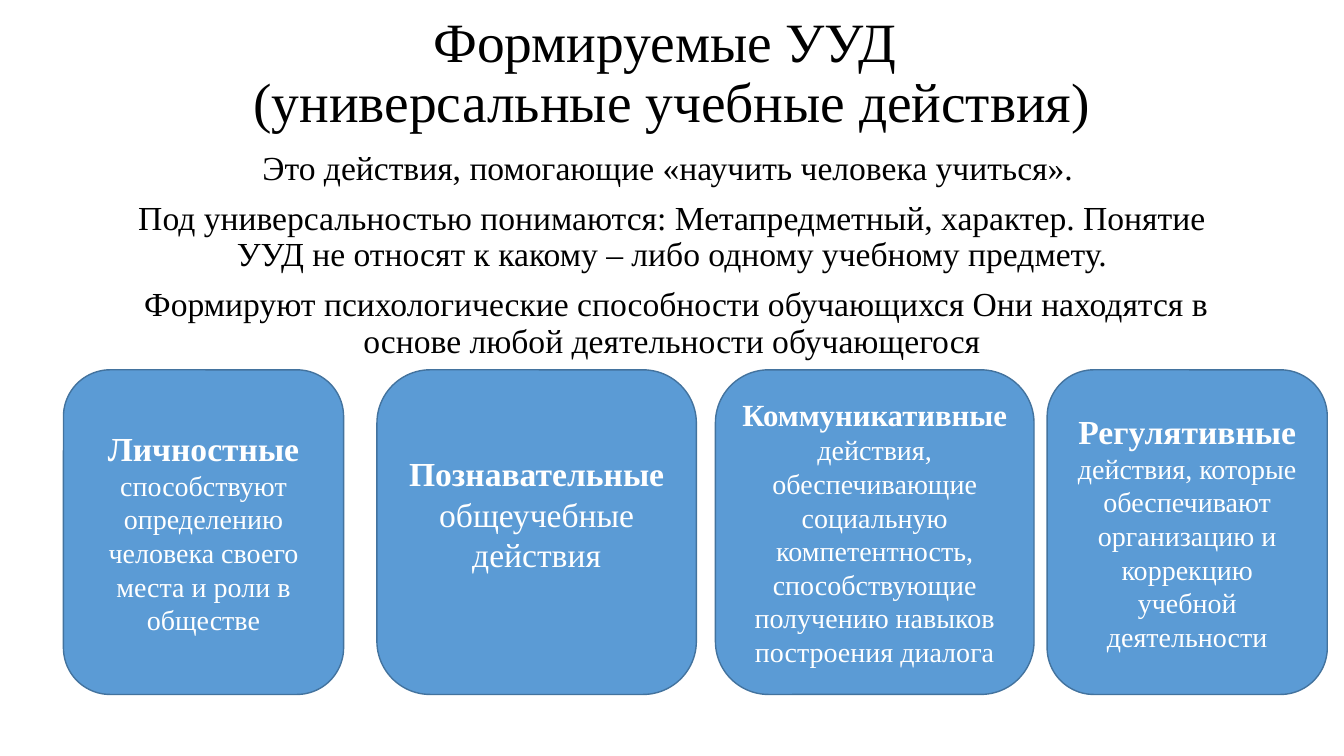
from pptx import Presentation
from pptx.dml.color import RGBColor
from pptx.enum import shapes, text
from pptx.util import Cm, Pt

COLORS = {"text": "000000", "card": "5B9BD5", "edge": "43739E", "card_text": "FFFFFF"}
FONT = "Times New Roman"
CARD_TOP, CARD_HEIGHT = 9.32, 8.18

TITLE = "Формируемые УУД \n(универсальные учебные действия)"
BODY = [
    "Это действия, помогающие «научить человека учиться». ",
    "Под универсальностью понимаются: Метапредметный, характер. Понятие УУД "
    "не относят к какому – либо одному учебному предмету.",
    " Формируют психологические способности обучающихся Они находятся в основе "
    "любой деятельности обучающегося",
]
CARDS = [
    (1.6, 7.06, "Личностные", 24,
     "способствуют определению человека своего места и роли в обществе", 20, 0.13),
    (9.5, 8.05, "Познавательные", 24, "общеучебные действия", 24, 1.05),
    (18.03, 8.03, "Коммуникативные", 22,
     "действия, обеспечивающие социальную компетентность, способствующие "
     "получению навыков построения диалога", 20, 0.13),
    (26.39, 7.06, "Регулятивные", 24,
     "действия, которые обеспечивают организацию и коррекцию учебной "
     "деятельности", 20, 0.13),
]


def rgb(name):
    return RGBColor.from_string(COLORS[name])


def write(tf, content, first=False, size=24, color="text", bold=False,
          spacing=None, before=0):
    p = tf.paragraphs[0] if first else tf.add_paragraph()
    p.alignment = text.PP_ALIGN.CENTER
    p.space_before = Pt(before)
    if spacing:
        p.line_spacing = spacing
    for i, line in enumerate(content.split("\n")):
        if i:
            p.add_line_break()
        r = p.add_run()
        r.text = line
        r.font.name = FONT
        r.font.size = Pt(size)
        r.font.bold = bold
        r.font.color.rgb = rgb(color)


def add_text(s, top, height, paragraphs, anchor, **style):
    sp = s.shapes.add_textbox(Cm(2.33), Cm(top), Cm(29.21), Cm(height))
    tf = sp.text_frame
    tf.word_wrap = True
    tf.vertical_anchor = anchor
    for i, content in enumerate(paragraphs):
        write(tf, content, first=i == 0, spacing=0.9, **style)


def add_card(s, left, width, heading, heading_size, detail, detail_size, bottom):
    sp = s.shapes.add_shape(shapes.MSO_SHAPE.ROUNDED_RECTANGLE, Cm(left),
                            Cm(CARD_TOP), Cm(width), Cm(CARD_HEIGHT))
    sp.shadow.inherit = False
    sp.fill.solid()
    sp.fill.fore_color.rgb = rgb("card")
    sp.line.color.rgb = rgb("edge")
    sp.line.width = Pt(1)
    tf = sp.text_frame
    tf.word_wrap = True
    tf.vertical_anchor = text.MSO_ANCHOR.MIDDLE
    tf.margin_bottom = Cm(bottom)
    write(tf, heading, first=True, size=heading_size, color="card_text", bold=True)
    write(tf, detail, size=detail_size, color="card_text")


def main():
    prs = Presentation()
    prs.slide_width, prs.slide_height = Cm(33.87), Cm(19.05)
    s = prs.slides.add_slide(prs.slide_layouts[6])
    add_text(s, 0.41, 2.95, [TITLE], text.MSO_ANCHOR.MIDDLE, size=39.6)
    add_text(s, 3.68, 14.45, BODY, text.MSO_ANCHOR.TOP, before=10)
    for card in CARDS:
        add_card(s, *card)
    prs.save("out.pptx")


if __name__ == "__main__":
    main()
